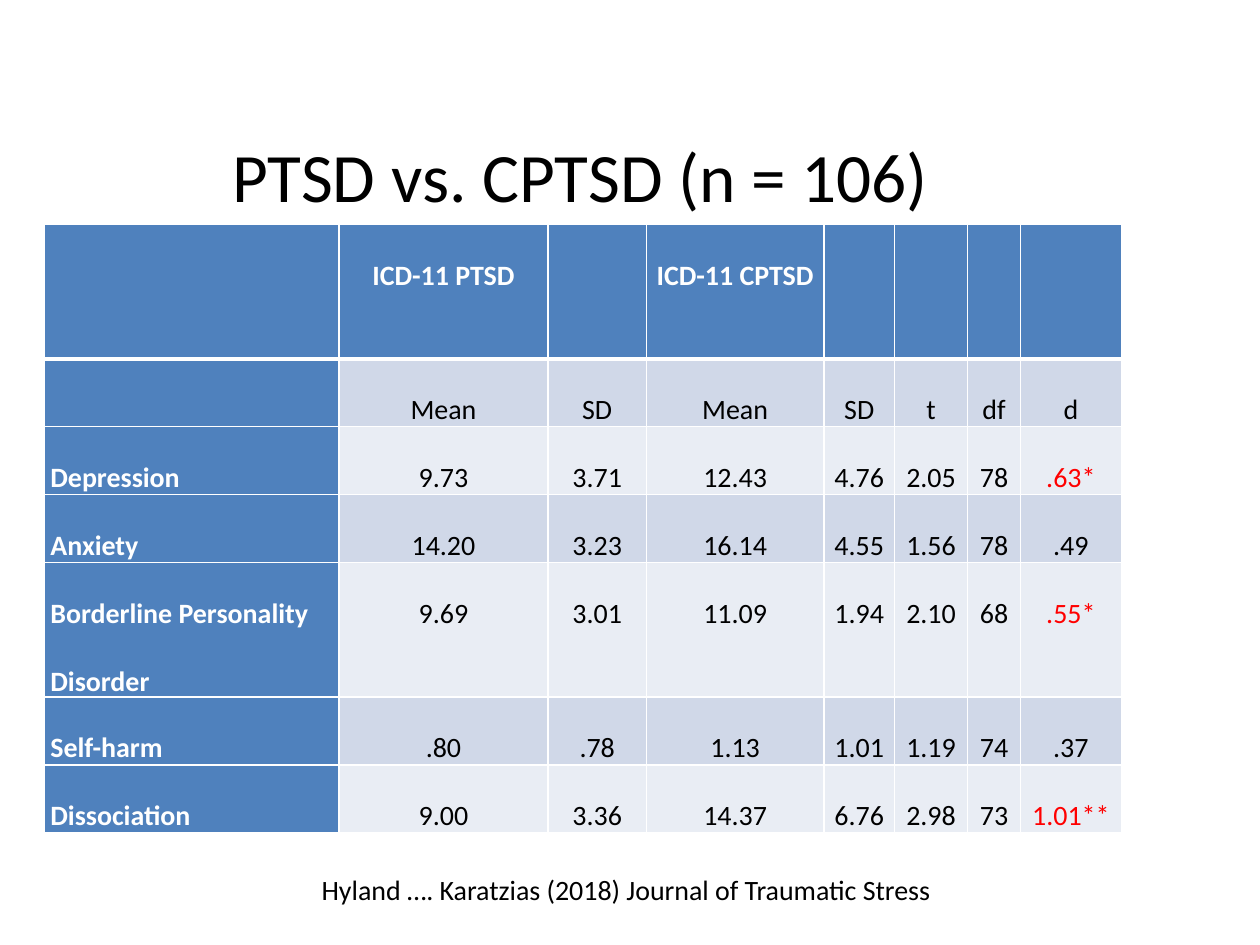
from dataclasses import dataclass

from lxml.etree import SubElement
from pptx import Presentation
from pptx.dml.color import RGBColor
from pptx.enum.text import MSO_ANCHOR, PP_ALIGN
from pptx.oxml.ns import qn
from pptx.util import Inches, Pt


@dataclass(frozen=True)
class Theme:
    font: str = "Calibri"
    title: float = 39.6
    body: float = 16
    white: str = "FFFFFF"
    black: str = "000000"
    accent: str = "4F81BD"
    bands: tuple = ("E9EDF4", "D0D8E8")
    significant: str = "FF0000"


COLS = [2.34, 1.66, 0.78, 1.41, 0.56, 0.58, 0.42, 0.8]
HEIGHTS = [1.07, 0.53, 0.54, 0.54, 1.07, 0.54, 0.54]
ROWS = [
    ["", "ICD-11 PTSD", "", "ICD-11 CPTSD", "", "", "", ""],
    ["", "Mean", "SD", "Mean", "SD", "t", "df", "d"],
    ["Depression", "9.73", "3.71", "12.43", "4.76", "2.05", "78", ".63*"],
    ["Anxiety", "14.20", "3.23", "16.14", "4.55", "1.56", "78", ".49"],
    ["Borderline Personality Disorder", "9.69", "3.01", "11.09", "1.94", "2.10", "68", ".55*"],
    ["Self-harm", ".80", ".78", "1.13", "1.01", "1.19", "74", ".37"],
    ["Dissociation", "9.00", "3.36", "14.37", "6.76", "2.98", "73", "1.01**"],
]


class SlideBuilder:
    """Holds the theme and the current slide, and adds styled elements to it."""

    def __init__(self, slide, theme):
        self.s = slide
        self.theme = theme

    def paragraph(self, tf, text, size, color, bold=False, **layout):
        p = tf.paragraphs[0]
        for name, value in layout.items():
            setattr(p, name, value)
        r = p.add_run()
        r.text = text
        for name, value in dict(name=self.theme.font, size=Pt(size), bold=bold).items():
            setattr(r.font, name, value)
        r.font.color.rgb = RGBColor.from_string(color)

    def text(self, text, size, left, top, width, height):
        tf = self.s.shapes.add_textbox(*map(Inches, (left, top, width, height))).text_frame
        frame = dict(word_wrap=True, vertical_anchor=MSO_ANCHOR.MIDDLE,
                     margin_top=0, margin_bottom=0)
        for name, value in frame.items():
            setattr(tf, name, value)
        self.paragraph(tf, text, size, self.theme.black, alignment=PP_ALIGN.CENTER)

    def borders(self, cell, **widths):
        tcPr = cell._tc.get_or_add_tcPr()
        for side in "LRTB":
            ln = SubElement(tcPr, qn(f"a:ln{side}"), w=str(Pt(widths.get(side, 1))))
            fill = SubElement(ln, qn("a:solidFill"))
            SubElement(fill, qn("a:srgbClr"), val=self.theme.white)

    def cell(self, cell, text, row, col):
        th = self.theme
        heading = row == 0 or col == 0
        self.borders(cell, T=3 if row == 1 else 1, B=3 if row == 0 else 1)
        cell.fill.solid()
        cell.fill.fore_color.rgb = RGBColor.from_string(th.accent if heading else th.bands[row % 2])
        if not text:
            return
        margins = dict(margin_left=0.05, margin_right=0.05, margin_top=0, margin_bottom=0)
        for name, value in margins.items():
            setattr(cell, name, Inches(value))
        color = th.white if heading else th.significant if "*" in text else th.black
        self.paragraph(cell.text_frame, text, th.body, color, heading,
                       alignment=PP_ALIGN.CENTER if col else PP_ALIGN.LEFT,
                       line_spacing=2.0, space_after=Pt(8))

    def table(self, rows, widths, heights, left, top):
        box = map(Inches, (left, top, sum(widths), sum(heights)))
        table = self.s.shapes.add_table(len(rows), len(widths), *box).table
        for column, width in zip(table.columns, widths):
            column.width = Inches(width)
        for i, (values, height) in enumerate(zip(rows, heights)):
            table.rows[i].height = Inches(height)
            for j, value in enumerate(values):
                self.cell(table.cell(i, j), value, i, j)


def main():
    prs = Presentation()
    prs.slide_width, prs.slide_height = Inches(10), Inches(7.5)
    theme = Theme()
    b = SlideBuilder(prs.slides.add_slide(prs.slide_layouts[6]), theme)
    b.text("PTSD vs. CPTSD (n = 106)", theme.title, 1.3, 1.01, 6.61, 0.76)
    b.table(ROWS, COLS, HEIGHTS, 0.35, 1.78)
    b.text("Hyland …. Karatzias (2018) Journal of Traumatic Stress", theme.body,
           0.35, 6.9, 9.24, 0.32)
    prs.save("out.pptx")


if __name__ == "__main__":
    main()
